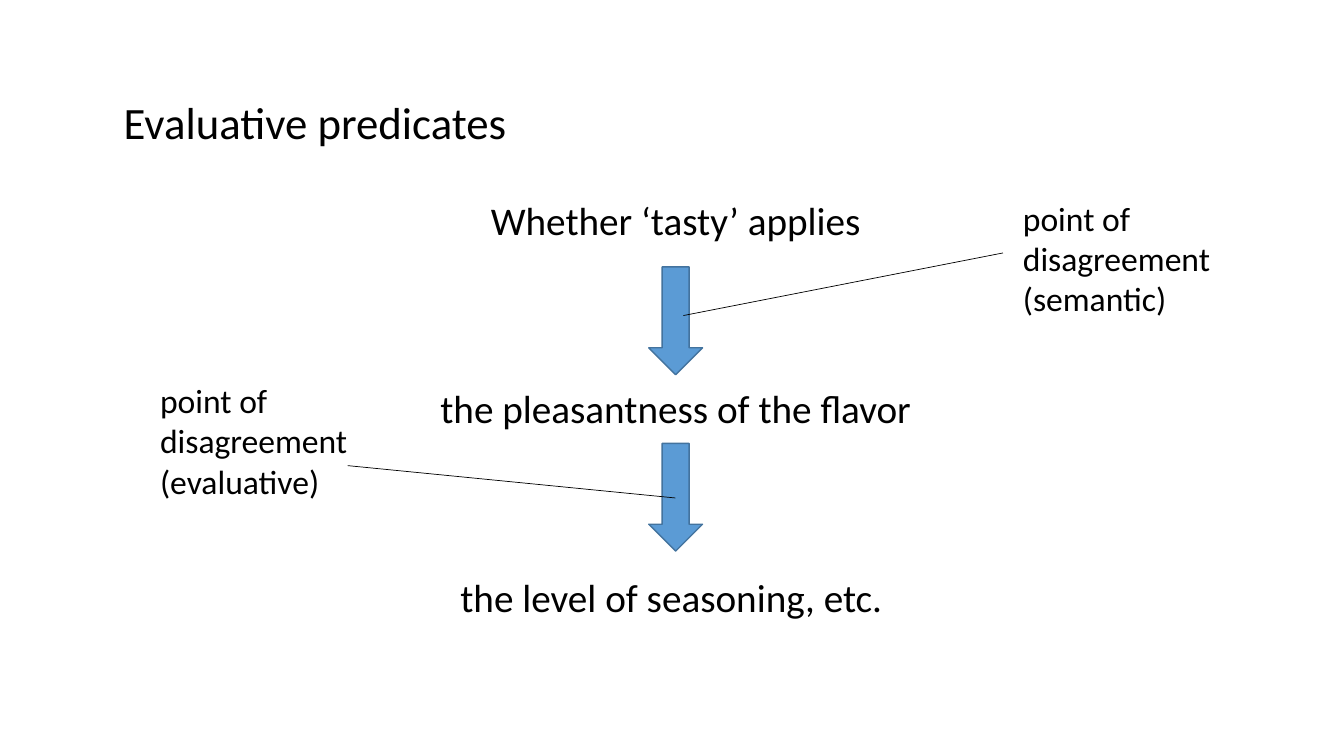
from lxml import etree
from pptx import Presentation
from pptx.dml.color import RGBColor
from pptx.enum import shapes, text
from pptx.oxml import ns
from pptx.util import Pt

FONT = "Calibri"
BLACK, BLUE, DARK_BLUE = "000000", "5B9BD5", "43739E"
ARROW_SIZE = (38.4, 77)


def color(hex_string):
    return RGBColor.from_string(hex_string)


def add_text(slide, box, lines):
    """Fill one text box with (wording, size, space before, alignment) lines."""
    frame = slide.shapes.add_textbox(*map(Pt, box)).text_frame
    frame.word_wrap = True
    for i, (wording, size, gap, alignment) in enumerate(lines):
        paragraph = frame.paragraphs[0] if i == 0 else frame.add_paragraph()
        paragraph.alignment = alignment
        paragraph.space_before = Pt(gap)
        run = paragraph.add_run()
        run.text = wording
        for attribute, value in {"name": FONT, "size": Pt(size)}.items():
            setattr(run.font, attribute, value)
        run.font.color.rgb = color(BLACK)


def add_levels(slide, box):
    """Title and the three centred levels, joined by down arrows."""
    left, top, width, _ = box
    center = text.PP_ALIGN.CENTER
    add_text(slide, box, [
        ("Evaluative predicates", 32, 0, text.PP_ALIGN.LEFT),
        ("Whether ‘tasty’ applies", 28, 34, center),
        ("the pleasantness of the flavor", 28, 101, center),
        ("the level of seasoning, etc. ", 28, 101, center),
    ])
    arrow_width, arrow_height = ARROW_SIZE
    for offset in (126.5, 252.5):
        arrow = slide.shapes.add_shape(
            shapes.MSO_SHAPE.DOWN_ARROW, Pt(left + (width - arrow_width) / 2),
            Pt(top + offset), Pt(arrow_width), Pt(arrow_height))
        arrow.shadow.inherit = False
        arrow.fill.solid()
        arrow.fill.fore_color.rgb = color(BLUE)
        arrow.line.color.rgb = color(DARK_BLUE)
        arrow.line.width = Pt(1)


def add_disagreement(slide, box, kind, start, end):
    """Note on a kind of disagreement; start and end of its line are relative to the box."""
    left, top = box[:2]
    add_text(slide, box, [(wording, 24, 0, text.PP_ALIGN.LEFT)
                          for wording in ("point of disagreement", f"({kind})")])
    pointer = slide.shapes.add_connector(
        shapes.MSO_CONNECTOR.STRAIGHT,
        Pt(left + start[0]), Pt(top + start[1]), Pt(left + end[0]), Pt(top + end[1]))
    pointer.line.color.rgb = color(BLACK)
    pointer.line.width = Pt(0.5)
    etree.SubElement(pointer._element.spPr, ns.qn("a:effectLst"))


def main():
    deck = Presentation()
    deck.slide_width, deck.slide_height = Pt(960), Pt(540)
    slide = deck.slides.add_slide(deck.slide_layouts[6])
    add_levels(slide, (81.2, 64.2, 802.8, 385.2))
    add_disagreement(slide, (107.3, 267.8, 185, 94.3), "evaluative",
                     (375.1, 87.9), (141.1, 64.8))
    add_disagreement(slide, (723.6, 137.5, 185, 94.3), "semantic",
                     (-235.4, 87.9), (-7.2, 43.2))
    deck.save("out.pptx")


if __name__ == "__main__":
    main()
